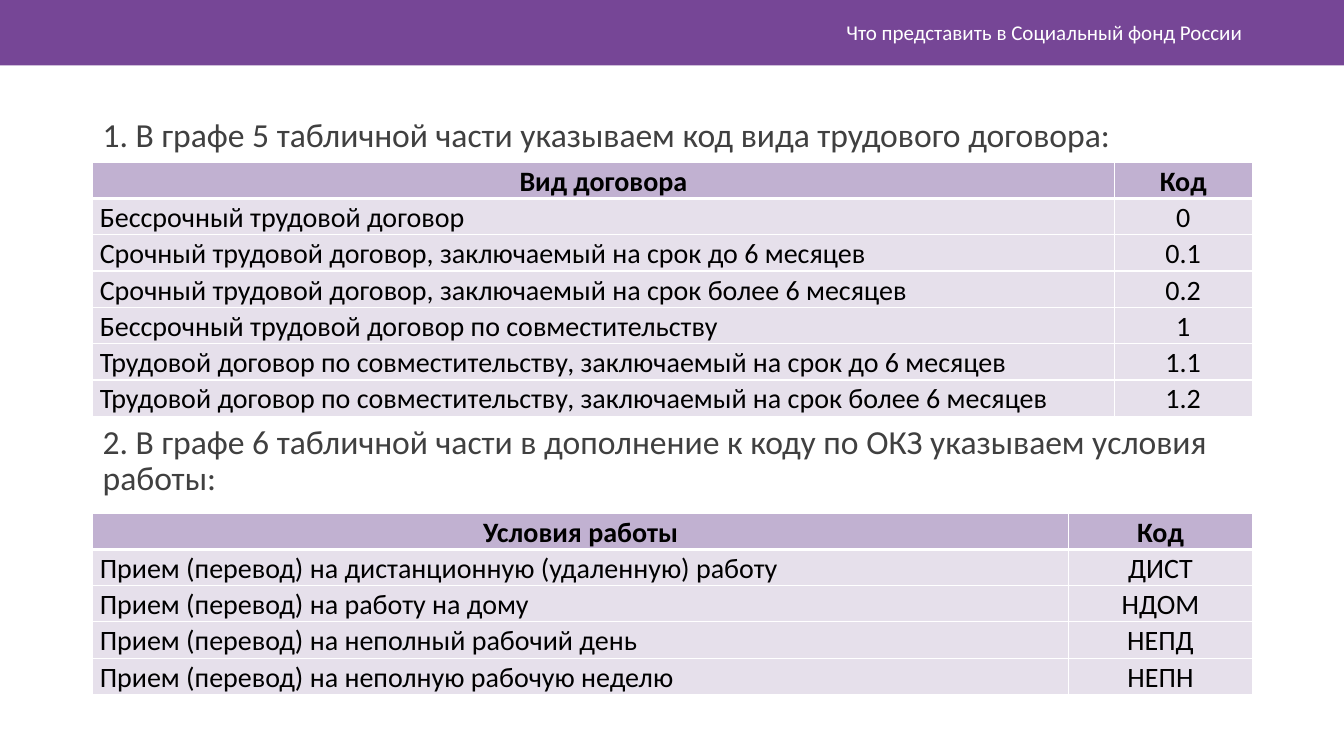
from lxml.etree import SubElement
from pptx import Presentation
from pptx.dml.color import RGBColor
from pptx.enum.shapes import MSO_SHAPE
from pptx.enum.text import MSO_ANCHOR, PP_ALIGN
from pptx.oxml.ns import qn
from pptx.util import Inches, Pt

TITLE = "Что представить в Социальный фонд России"
HEADINGS = [
    # text, top, height
    ("1. В графе 5 табличной части указываем код вида трудового договора:", 1.13, 0.47),
    ("2. В графе 6 табличной части в дополнение к коду по ОКЗ указываем условия работы:", 4.17, 0.84),
]
CONTRACTS = [
    ("Вид договора", "Код"),
    ("Бессрочный трудовой договор", "0"),
    ("Срочный трудовой договор, заключаемый на срок до 6 месяцев", "0.1"),
    ("Срочный трудовой договор, заключаемый на срок более 6 месяцев", "0.2"),
    ("Бессрочный трудовой договор по совместительству", "1"),
    ("Трудовой договор по совместительству, заключаемый на срок до 6 месяцев", "1.1"),
    ("Трудовой договор по совместительству, заключаемый на срок более 6 месяцев", "1.2"),
]
CONDITIONS = [
    ("Условия работы", "Код"),
    ("Прием (перевод) на дистанционную (удаленную) работу", "ДИСТ"),
    ("Прием (перевод) на работу на дому", "НДОМ"),
    ("Прием (перевод) на неполный рабочий день", "НЕПД"),
    ("Прием (перевод) на неполную рабочую неделю", "НЕПН"),
]
TABLES = [(CONTRACTS, 1.61, 1.37), (CONDITIONS, 5.09, 1.82)]  # rows, top, code width

SLIDE_W, SLIDE_H = 13.33, 7.5
LEFT, WIDTH = 0.92, 11.5
ROW_H = 0.36
PURPLE, HEAD_FILL, ROW_FILL = "764696", "C1B1D1", "E6E0EB"
WHITE, BLACK, GREY = "FFFFFF", "000000", "404040"


def rgb(color):
    return RGBColor.from_string(color)


def format_text(p, size, color, align=PP_ALIGN.LEFT, bold=False, spacing=1.0):
    p.alignment = align
    p.line_spacing = spacing
    for r in p.runs:
        r.font.name, r.font.size, r.font.bold = "Calibri", Pt(size), bold
        r.font.color.rgb = rgb(color)


def add_text(slide, text, box, anchor=MSO_ANCHOR.TOP, **style):
    tf = slide.shapes.add_textbox(*map(Inches, box)).text_frame
    tf.word_wrap = True
    tf.vertical_anchor = anchor
    tf.text = text
    format_text(tf.paragraphs[0], **style)


def add_borders(cell, top, bottom):
    """Draw white borders; top and bottom are widths in points."""
    tcPr = cell._tc.get_or_add_tcPr()
    for tag, width in (("lnL", 1), ("lnR", 1), ("lnT", top), ("lnB", bottom)):
        ln = SubElement(tcPr, qn(f"a:{tag}"), w=str(Pt(width)))
        SubElement(SubElement(ln, qn("a:solidFill")), qn("a:srgbClr"), val=WHITE)


def add_code_table(slide, rows, top, code_w):
    box = (LEFT, top, WIDTH, ROW_H * len(rows))
    table = slide.shapes.add_table(len(rows), 2, *map(Inches, box)).table
    for column, width in zip(table.columns, (WIDTH - code_w, code_w)):
        column.width = Inches(width)
    for i, row in enumerate(rows):
        table.rows[i].height = Inches(ROW_H)
        for j, text in enumerate(row):
            cell = table.cell(i, j)
            cell.margin_left = cell.margin_right = Inches(0.07)
            cell.margin_top = cell.margin_bottom = 0
            add_borders(cell, top=3 if i == 1 else 1, bottom=3 if i == 0 else 1)
            cell.fill.solid()
            cell.fill.fore_color.rgb = rgb(ROW_FILL if i else HEAD_FILL)
            cell.text = text
            align = PP_ALIGN.LEFT if i and j == 0 else PP_ALIGN.CENTER
            format_text(cell.text_frame.paragraphs[0], 20, BLACK, align, i == 0, 1.07)


def main():
    prs = Presentation()
    prs.slide_width, prs.slide_height = Inches(SLIDE_W), Inches(SLIDE_H)
    slide = prs.slides.add_slide(prs.slide_layouts[6])

    band = slide.shapes.add_shape(MSO_SHAPE.RECTANGLE, 0, 0, prs.slide_width, Inches(0.65))
    band.shadow.inherit = False
    band.fill.solid()
    band.fill.fore_color.rgb = rgb(PURPLE)
    band.line.fill.background()

    add_text(slide, TITLE, (3.54, 0.12, 8.88, 0.4), MSO_ANCHOR.MIDDLE,
             size=15, color=WHITE, align=PP_ALIGN.RIGHT)
    for text, top, height in HEADINGS:
        add_text(slide, text, (LEFT, top, WIDTH, height), size=24, color=GREY, spacing=0.9)
    for rows, top, code_w in TABLES:
        add_code_table(slide, rows, top, code_w)

    prs.save("out.pptx")


if __name__ == "__main__":
    main()
